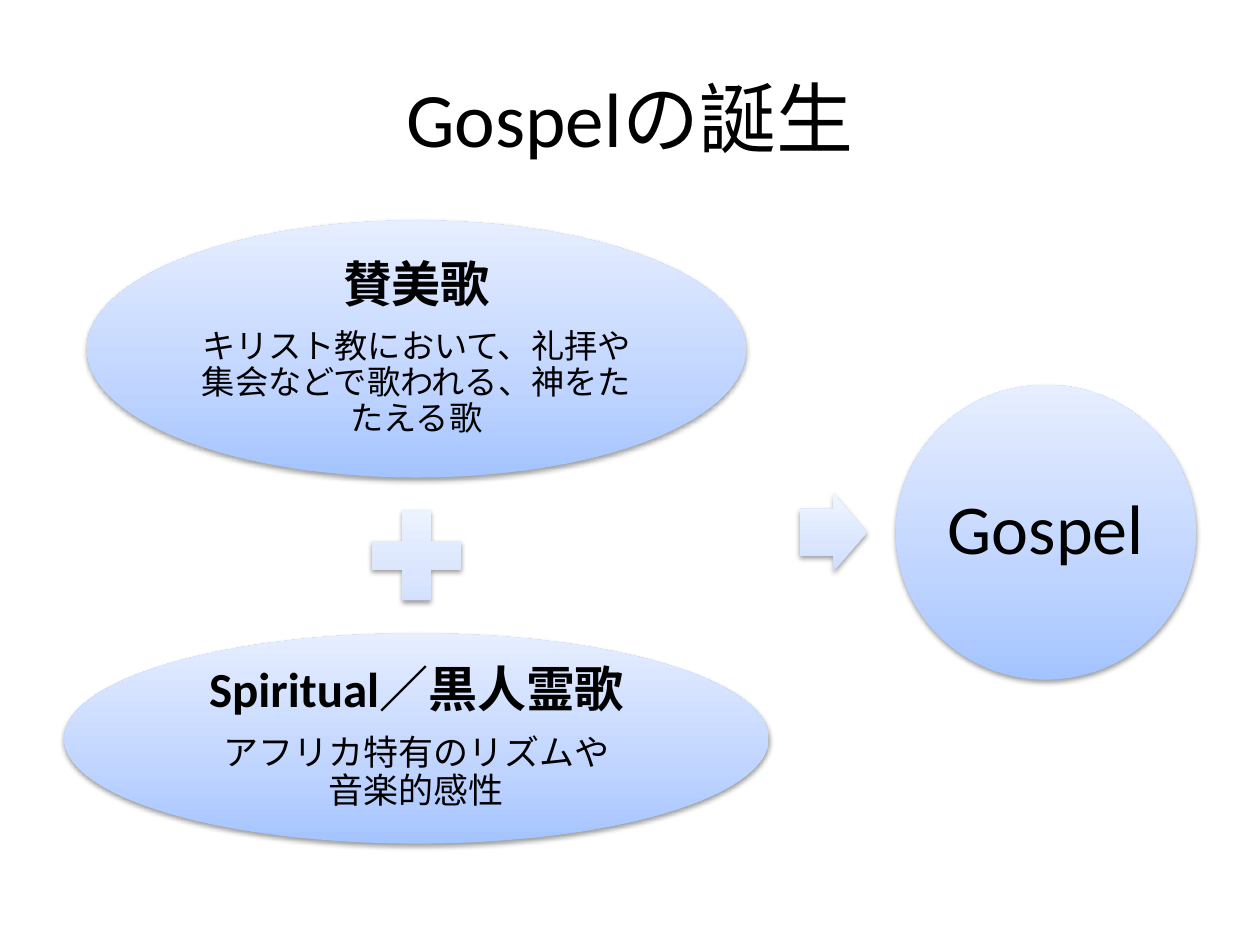
import pptx
import pptx.dml.color
import pptx.enum.shapes
import pptx.enum.text
import pptx.oxml
import pptx.oxml.ns
import pptx.util

Pt = pptx.util.Pt
Shape = pptx.enum.shapes.MSO_SHAPE

COLORS = {
    "text": "000000",
    "shadow": "000000",
    "strong": ("A4C4FF", "BFD4FF", "E6EEFF"),
    "pale": ("CDDDFE", "DBE6FE", "F0F5FF"),
}
STOPS = (0, 35, 100)
COLUMN_CENTER = 238
COLUMN_TOP = 126
COLUMN_GAP = 9.6
ROW_CENTER = 304.2


class SlideBuilder:
    """Holds the style and the current slide, and adds each kind of element."""

    font_name = "Calibri"
    paragraph_format = {"alignment": pptx.enum.text.PP_ALIGN.CENTER}

    def __init__(self, presentation):
        self.slide = presentation.slides.add_slide(presentation.slide_layouts[6])

    def set_text(self, shape, lines, inset=None, spacing=None):
        frame = shape.text_frame
        frame_format = {
            "word_wrap": True,
            "vertical_anchor": pptx.enum.text.MSO_ANCHOR.MIDDLE,
        }
        if inset is not None:
            for side in ("left", "top", "right", "bottom"):
                frame_format["margin_" + side] = Pt(inset)
        for name, value in frame_format.items():
            setattr(frame, name, value)
        for index, (text, size, bold) in enumerate(lines):
            paragraph = frame.add_paragraph() if index else frame.paragraphs[0]
            paragraph.text = text
            paragraph_format = dict(self.paragraph_format)
            if spacing:
                paragraph_format.update(line_spacing=spacing, space_after=Pt(size * 0.35))
            for name, value in paragraph_format.items():
                setattr(paragraph, name, value)
            run_format = {"name": self.font_name, "size": Pt(size), "bold": bold}
            for run in paragraph.runs:
                for name, value in run_format.items():
                    setattr(run.font, name, value)
                run.font.color.rgb = pptx.dml.color.RGBColor.from_string(COLORS["text"])

    def title(self, text, left, top, width, height):
        box = self.slide.shapes.add_textbox(Pt(left), Pt(top), Pt(width), Pt(height))
        self.set_text(box, [(text, 44, False)])

    def shape(self, kind, center_x, center_y, width, height, palette):
        shape = self.slide.shapes.add_shape(
            kind, Pt(center_x - width / 2), Pt(center_y - height / 2), Pt(width), Pt(height)
        )
        namespace = pptx.oxml.ns.nsdecls("a")
        stops = "".join(
            f'<a:gs pos="{stop * 1000}"><a:srgbClr val="{color}"/></a:gs>'
            for stop, color in zip(STOPS, COLORS[palette])
        )
        gradient = pptx.oxml.parse_xml(
            f'<a:gradFill {namespace} rotWithShape="1"><a:gsLst>{stops}</a:gsLst>'
            '<a:lin ang="16200000" scaled="0"/></a:gradFill>'
        )
        shadow = pptx.oxml.parse_xml(
            f'<a:effectLst {namespace}><a:outerShdw blurRad="{Pt(3.1)}" dist="{Pt(1.6)}"'
            f' dir="5400000" rotWithShape="0"><a:srgbClr val="{COLORS["shadow"]}">'
            '<a:alpha val="38000"/></a:srgbClr></a:outerShdw></a:effectLst>'
        )
        properties = shape._element.spPr
        properties.append(gradient)
        shape.line.fill.background()
        properties.append(shadow)
        return shape

    def bubble(self, center_x, center_y, width, height, lines, inset):
        ellipse = self.shape(Shape.OVAL, center_x, center_y, width, height, "strong")
        self.set_text(ellipse, lines, inset, 0.9)

    def symbol(self, kind, center_x, center_y, width, height):
        return self.shape(kind, center_x, center_y, width, height, "pale")


def main():
    presentation = pptx.Presentation()
    presentation.slide_width, presentation.slide_height = Pt(720), Pt(540)
    builder = SlideBuilder(presentation)
    builder.title("Gospelの誕生", 36, 21.6, 648, 90)

    hymn = [
        ("賛美歌", 28, True),
        ("キリスト教において、礼拝や集会などで歌われる、神をたたえる歌", 19, False),
    ]
    spiritual = [
        ("Spiritual／黒人霊歌", 28, True),
        ("アフリカ特有のリズムや\v音楽的感性", 20, False),
    ]
    top = COLUMN_TOP
    for width, height, lines in ((376.6, 146.9, hymn), (69.8, 69.8, None), (402.5, 120.2, spiritual)):
        center_y = top + height / 2
        if lines:
            builder.bubble(COLUMN_CENTER, center_y, width, height, lines, 2.8)
        else:
            builder.symbol(Shape.MATH_PLUS, COLUMN_CENTER, center_y, width, height)
        top += height + COLUMN_GAP

    arrow = builder.symbol(Shape.RIGHT_ARROW, 476.3, ROW_CENTER, 38.2, 44.6)
    arrow.adjustments[0] = 0.6
    arrow.adjustments[1] = 0.5
    builder.bubble(597.6, ROW_CENTER, 171.4, 168.5, [("Gospel", 40, False)], 4)
    presentation.save("out.pptx")


if __name__ == "__main__":
    main()
